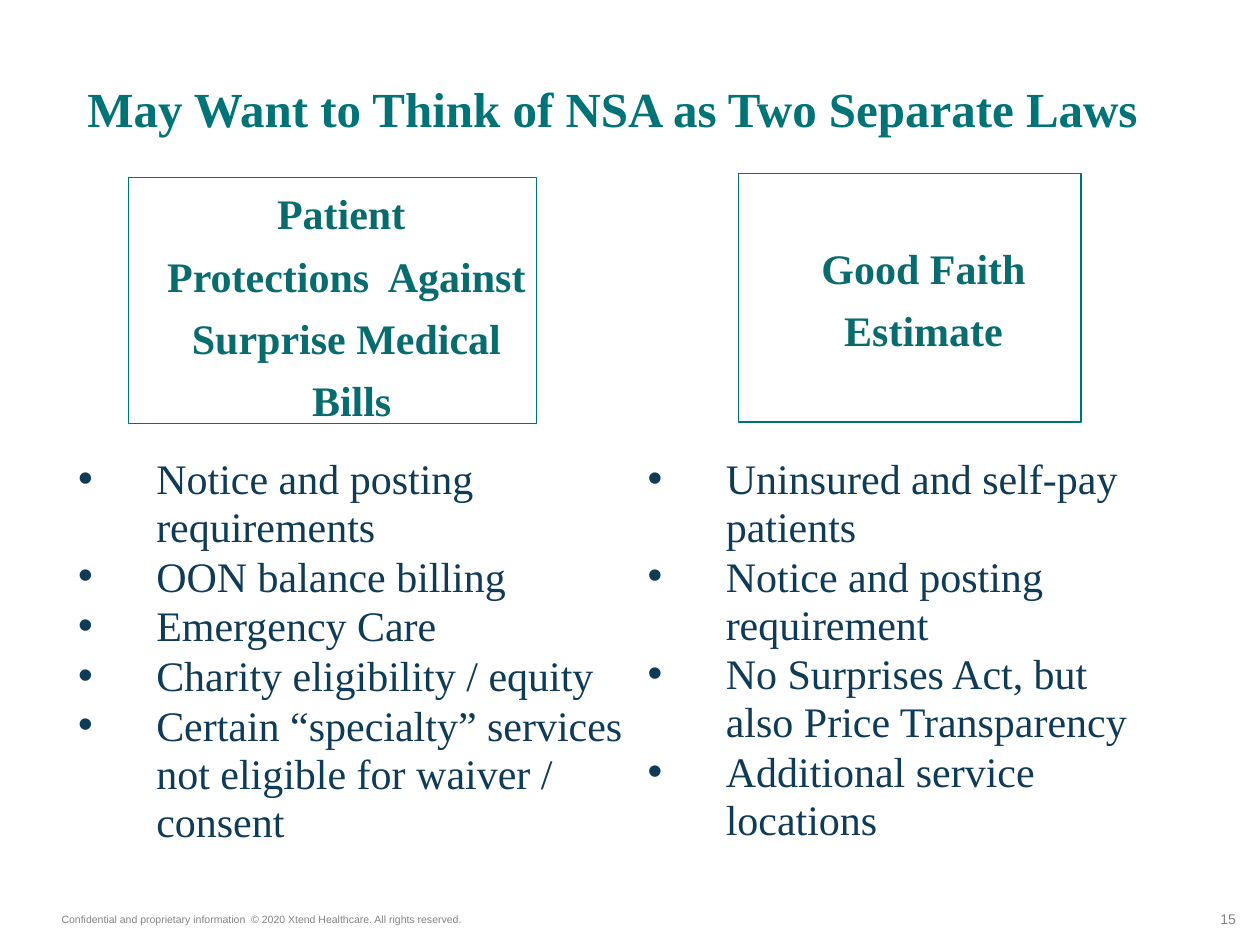
"""Build the slide that presents the NSA as two separate laws."""
from lxml import etree
from pptx import Presentation
from pptx.dml.color import RGBColor
from pptx.enum.shapes import MSO_SHAPE
from pptx.enum.text import MSO_ANCHOR, MSO_AUTO_SIZE, PP_ALIGN
from pptx.oxml.ns import qn
from pptx.util import Inches, Pt

RECTANGLE = MSO_SHAPE.RECTANGLE
TOP, MIDDLE, BOTTOM = MSO_ANCHOR.TOP, MSO_ANCHOR.MIDDLE, MSO_ANCHOR.BOTTOM
NO_AUTOFIT = MSO_AUTO_SIZE.NONE
LEFT, CENTER, RIGHT = PP_ALIGN.LEFT, PP_ALIGN.CENTER, PP_ALIGN.RIGHT

TEAL = RGBColor(0x00, 0x73, 0x77)
DARK_TEAL = RGBColor(0x08, 0x6B, 0x6E)
NAVY = RGBColor(0x0F, 0x3B, 0x57)
GRAY = RGBColor(0x83, 0x83, 0x83)

TITLE_FONT = {"name": "Times New Roman", "size": Pt(28), "bold": True}
HEADING_FONT = {"name": "Times New Roman", "size": Pt(24), "bold": True}
LIST_FONT = {"name": "Times New Roman", "size": Pt(24), "bold": False}
NUMBER_FONT = {"name": "Arial", "size": Pt(8)}
FOOTER_FONT = {"name": "Arial", "size": Pt(6)}

LAWS = [
    {
        "box": (1.02, 1.41, 3.24, 1.95),
        "insets": (0, 0.08, 0, 0),
        "heading": ["Patient ", "Protections  Against", "Surprise Medical", " Bills"],
        "list": (0.62, 3.6, 4.33, 3.1),
        "items": [
            "Notice and posting requirements",
            "OON balance billing",
            "Emergency Care",
            "Charity eligibility / equity",
            "Certain “specialty” services not eligible for waiver / consent",
        ],
    },
    {
        "box": (5.86, 1.38, 2.72, 1.97),
        "insets": (0.1, 0.05, 0.1, 0.05),
        "heading": ["Good Faith", "Estimate"],
        "list": (5.14, 3.6, 4.03, 3.09),
        "items": [
            "Uninsured and self-pay patients",
            "Notice and posting requirement",
            "No Surprises Act, but also Price Transparency",
            "Additional service locations",
        ],
    },
]


def place(shape, position, insets, anchor, wrap=True):
    for name, value in zip(("left", "top", "width", "height"), position):
        setattr(shape, name, Inches(value))
    frame = shape.text_frame
    for side, value in zip(("left", "top", "right", "bottom"), insets):
        setattr(frame, f"margin_{side}", Inches(value))
    frame.auto_size = NO_AUTOFIT
    frame.word_wrap = wrap
    frame.vertical_anchor = anchor


def write(shape, lines, font, color, alignment, space=0, line_spacing=1.0, indents=(0, 0), bullet=None):
    frame = shape.text_frame
    for index, line in enumerate(lines):
        paragraph = frame.add_paragraph() if index else frame.paragraphs[0]
        paragraph.alignment = alignment
        paragraph.space_before = Pt(space if index else 0)
        paragraph.space_after = Pt(0)
        paragraph.line_spacing = line_spacing
        properties = paragraph._p.get_or_add_pPr()
        for name, value in zip(("marL", "indent"), indents):
            properties.set(name, str(Inches(value)))
        if bullet:
            etree.SubElement(properties, qn("a:buFont"), typeface="Arial")
            etree.SubElement(properties, qn("a:buChar"), char=bullet)
        run = paragraph.add_run()
        run.text = line
        for name, value in font.items():
            setattr(run.font, name, value)
        run.font.color.rgb = color


presentation = Presentation()
presentation.slide_width = Inches(10)
presentation.slide_height = Inches(7.5)
slide = presentation.slides.add_slide(presentation.slide_layouts[3])

title = slide.shapes.title
place(title, (0.45, 0.57, 8.82, 0.57), (0.1, 0.05, 0.1, 0.05), BOTTOM)
write(title, ["May Want to Think of NSA as Two Separate Laws"], TITLE_FONT, TEAL, CENTER)

for number, law in enumerate(LAWS, start=1):
    box = slide.shapes.add_shape(RECTANGLE, *map(Inches, law["box"]))
    box.shadow.inherit = False
    box.fill.background()
    box.line.color.rgb = TEAL
    box.line.width = Pt(0.75)
    place(box, law["box"], law["insets"], MIDDLE)
    write(box, law["heading"], HEADING_FONT, DARK_TEAL, CENTER, 5.7, 1.04, (0, 0.22))

    body = slide.placeholders[number]
    place(body, law["list"], (0, 0.01, 0, 0), TOP)
    write(body, law["items"], LIST_FONT, NAVY, LEFT, 1, Pt(27.4), (0.62, -0.62), "•")

footer_position = (0.39, 7.2, 3.43, 0.2)
footer = slide.shapes.add_textbox(*map(Inches, footer_position))
place(footer, footer_position, (0.1, 0.05, 0.1, 0.05), TOP, wrap=False)
write(
    footer,
    ["Confidential and proprietary information  © 2020 Xtend Healthcare. All rights reserved."],
    FOOTER_FONT, GRAY, LEFT,
)

number_position = (9.24, 7.16, 0.57, 0.27)
page_number = slide.shapes.add_textbox(*map(Inches, number_position))
place(page_number, number_position, (0, 0.05, 0, 0.05), MIDDLE)
write(page_number, ["15"], NUMBER_FONT, GRAY, RIGHT)

presentation.save("out.pptx")
